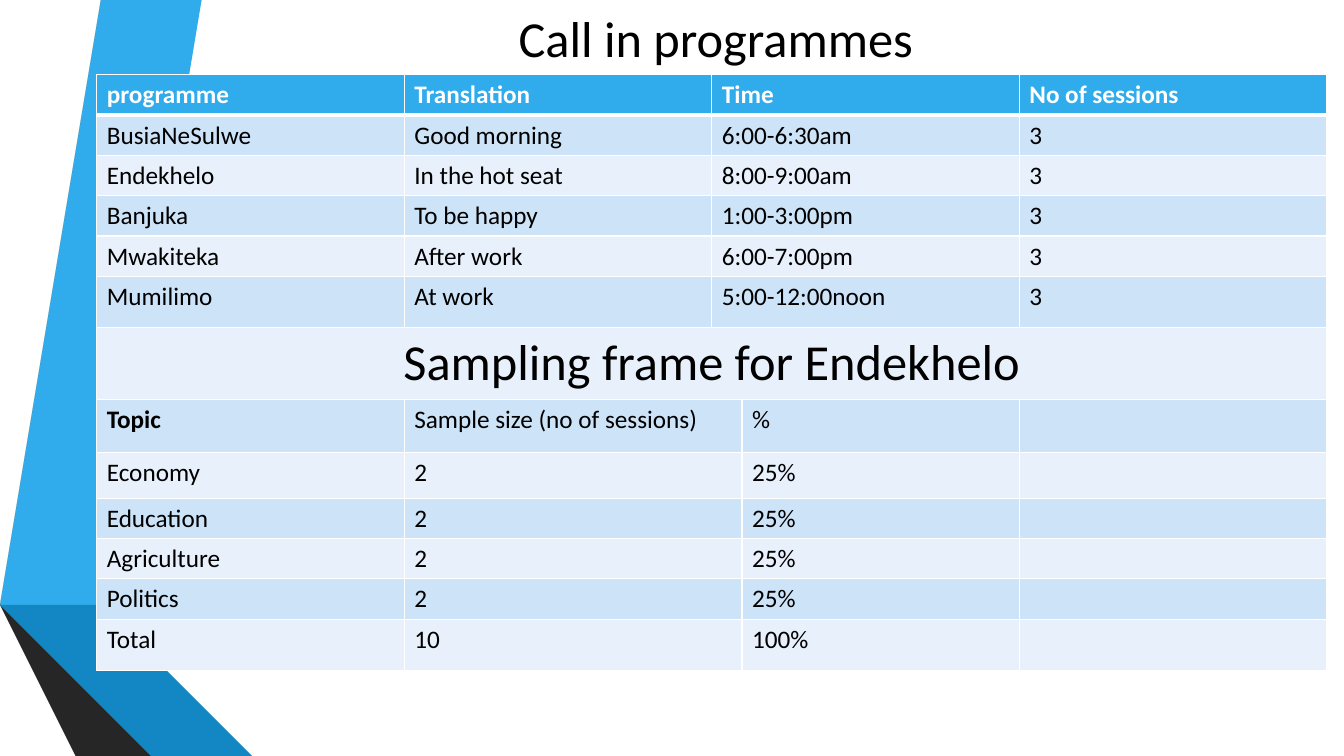
from lxml import etree
from pptx import Presentation
from pptx.dml.color import RGBColor
from pptx.enum.text import MSO_ANCHOR, PP_ALIGN
from pptx.oxml.ns import qn
from pptx.util import Inches, Pt

WIDTH, HEIGHT = 13.33, 7.5
FONT = "Calibri"
BLACK, WHITE, BLUE = "000000", "FFFFFF", "30ACEC"
BANDS = ("CDE3F8", "E8F1FB")

RIBBONS = [
    (BLUE, [(0.5, 5.78), (0.77, 5.83), (1.73, 0), (1.45, 0)]),
    ("595959", [(1.39, 0), (1.11, 0), (0.16, 5.73), (0.44, 5.77)]),
    ("262626", [(0.16, 5.73), (1.45, HEIGHT), (1.51, HEIGHT)]),
    ("0C5A82", [(0.5, 5.79), (2.08, HEIGHT), (2.14, HEIGHT)]),
    ("1287C3", [(0.5, 5.78), (2.14, HEIGHT), (2.83, HEIGHT), (0.77, 5.83)]),
    ("404040", [(2.02, HEIGHT), (0.48, 5.83), (0.44, 5.77), (0.16, 5.73),
                (1.51, HEIGHT)]),
]

PROGRAMMES = [
    ("programme", "Translation", "Time", "No of sessions"),
    ("BusiaNeSulwe", "Good morning", "6:00-6:30am", "3"),
    ("Endekhelo", "In the hot seat", "8:00-9:00am", "3"),
    ("Banjuka", "To be happy", "1:00-3:00pm", "3"),
    ("Mwakiteka", "After work", "6:00-7:00pm", "3"),
    ("Mumilimo", "At work", "5:00-12:00noon", "3"),
]
FRAME_TITLE = "Sampling frame for Endekhelo"
SAMPLING = [
    ("Topic", "Sample size (no of sessions)", "%", ""),
    ("Economy", "2", "25%", ""),
    ("Education", "2", "25%", ""),
    ("Agriculture", "2", "25%", ""),
    ("Politics", "2", "25%", ""),
    ("Total", "10", "100%", ""),
]
COL_WIDTHS = [3.05, 3.05, 0.3, 2.75, 3.05]
ROW_HEIGHTS = [0.4] * 5 + [0.51, 0.71, 0.53, 0.45] + [0.4] * 3 + [0.51]


def rgb(color):
    return RGBColor.from_string(color)


def style_paragraph(p, size, color=BLACK, bold=False, align=PP_ALIGN.LEFT):
    p.alignment = align
    for font in [p.font] + [r.font for r in p.runs]:
        font.name, font.size, font.bold = FONT, Pt(size), bold
        font.color.rgb = rgb(color)


def add_ribbons(s):
    for color, (start, *rest) in RIBBONS:
        builder = s.shapes.build_freeform(*start, scale=Inches(1))
        builder.add_line_segments(rest, close=True)
        sp = builder.convert_to_shape()
        sp.shadow.inherit = False
        sp.fill.solid()
        sp.fill.fore_color.rgb = rgb(color)
        sp.line.fill.background()


def add_title(s, text, x, y, w, h):
    tf = s.shapes.add_textbox(*map(Inches, (x, y, w, h))).text_frame
    tf.word_wrap = True
    tf.vertical_anchor = MSO_ANCHOR.MIDDLE
    tf.text = text
    style_paragraph(tf.paragraphs[0], 36, align=PP_ALIGN.CENTER)


def set_borders(cell, top=1, bottom=1):
    """Draw white cell borders, placed ahead of the fill as the schema asks."""
    tc_pr = cell._tc.get_or_add_tcPr()
    sides = (("a:lnL", 1), ("a:lnR", 1), ("a:lnT", top), ("a:lnB", bottom))
    for i, (tag, width) in enumerate(sides):
        ln = etree.Element(qn(tag), w=str(Pt(width)))
        fill = etree.SubElement(ln, qn("a:solidFill"))
        etree.SubElement(fill, qn("a:srgbClr"), val=WHITE)
        tc_pr.insert(i, ln)


def fill_row(table, row, texts, columns):
    for text, col in zip(texts, columns):
        cell = table.cell(row, col)
        cell.text = text
        style_paragraph(cell.text_frame.paragraphs[0], 18,
                        WHITE if row == 0 else BLACK,
                        row == 0 or text == "Topic")


def add_programme_table(s, x, y):
    n_rows, n_cols = len(ROW_HEIGHTS), len(COL_WIDTHS)
    table = s.shapes.add_table(
        n_rows, n_cols, Inches(x), Inches(y),
        Inches(sum(COL_WIDTHS)), Inches(sum(ROW_HEIGHTS))).table
    for column, width in zip(table.columns, COL_WIDTHS):
        column.width = Inches(width)
    for i, (row, height) in enumerate(zip(table.rows, ROW_HEIGHTS)):
        row.height = Inches(height)
        for cell in row.cells:
            cell.fill.solid()
            cell.fill.fore_color.rgb = rgb(BANDS[(i - 1) % 2] if i else BLUE)
            set_borders(cell, 3 if i == 1 else 1, 3 if i == 0 else 1)
            style_paragraph(cell.text_frame.paragraphs[0], 18)

    divider = len(PROGRAMMES)
    for i, texts in enumerate(PROGRAMMES):
        table.cell(i, 2).merge(table.cell(i, 3))
        fill_row(table, i, texts, (0, 1, 2, 4))
    for i, texts in enumerate(SAMPLING, divider + 1):
        table.cell(i, 1).merge(table.cell(i, 2))
        fill_row(table, i, texts, (0, 1, 3, 4))
    heading = table.cell(divider, 0)
    heading.merge(table.cell(divider, n_cols - 1))
    heading.text = FRAME_TITLE
    style_paragraph(heading.text_frame.paragraphs[0], 36,
                    align=PP_ALIGN.CENTER)


def main():
    prs = Presentation()
    prs.slide_width, prs.slide_height = Inches(WIDTH), Inches(HEIGHT)
    s = prs.slides.add_slide(prs.slide_layouts[6])
    add_ribbons(s)
    add_title(s, "Call in programmes", 1.62, 0, 10.96, 0.74)
    add_programme_table(s, 0.96, 0.74)
    prs.save("out.pptx")


if __name__ == "__main__":
    main()
